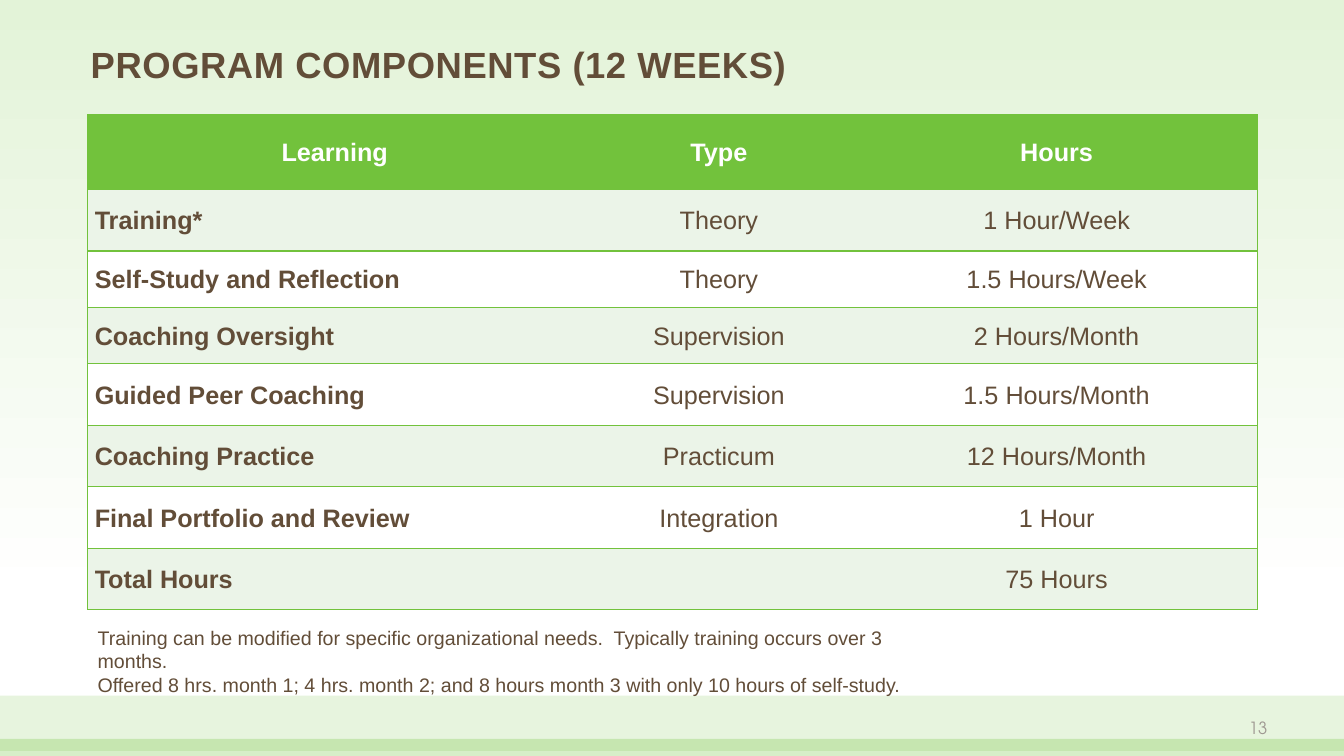
from lxml.etree import SubElement
from pptx import Presentation
from pptx.dml.color import RGBColor
from pptx.enum.shapes import MSO_SHAPE
from pptx.enum.text import MSO_ANCHOR, MSO_AUTO_SIZE, PP_ALIGN
from pptx.oxml.ns import qn
from pptx.util import Pt

PX = 9144  # EMU per px, 100 px to the inch
SLIDE_WIDTH, SLIDE_HEIGHT = 1333, 750

GREEN = RGBColor(0x72, 0xC2, 0x3C)
MIST = RGBColor(0xE3, 0xF3, 0xD8)
PALE = RGBColor(0xEB, 0xF4, 0xE8)
WHITE = RGBColor(0xFF, 0xFF, 0xFF)
BROWN = RGBColor(0x62, 0x4D, 0x38)
GREY = RGBColor(0x9E, 0x97, 0x91)

TITLE_FONT = {"name": "Arial", "size": Pt(26), "bold": True}
HEADER_FONT = {"name": "Arial", "size": Pt(18), "bold": True}
CELL_FONT = {"name": "Arial", "size": Pt(18), "bold": False}
NOTE_FONT = {"name": "Arial", "size": Pt(14)}
NUMBER_FONT = {"name": "TeX Gyre Adventor", "size": Pt(12)}

COLUMN_WIDTHS = [490, 272, 398]
ROW_HEIGHTS = [74, 61, 56, 56, 61, 61, 61, 61]
COMPONENTS = [
    ("Learning", "Type", "Hours"),
    ("Training*", "Theory", "1 Hour/Week"),
    ("Self-Study and Reflection", "Theory", "1.5 Hours/Week"),
    ("Coaching Oversight", "Supervision", "2 Hours/Month"),
    ("Guided Peer Coaching", "Supervision", "1.5 Hours/Month"),
    ("Coaching Practice", "Practicum", "12 Hours/Month"),
    ("Final Portfolio and Review", "Integration", "1 Hour"),
    ("Total Hours", "", "75 Hours"),
]
NOTES = [
    "Training can be modified for specific organizational needs.  "
    "Typically training occurs over 3 months.",
    "Offered 8 hrs. month 1; 4 hrs. month 2; and 8 hours month 3 "
    "with only 10 hours of self-study.",
]


def emu(box):
    return [length * PX for length in box]


def set_values(target, values):
    for name, value in values.items():
        setattr(target, name, value)


def write(para, text, font, color, align=PP_ALIGN.LEFT):
    para.alignment = align
    span = para.add_run()
    span.text = text
    set_values(span.font, font)
    span.font.color.rgb = color
    return span


def add_background(slide):
    fill = slide.background.fill
    fill.gradient()
    fill.gradient_angle = 270
    for stop, position, color in zip(fill.gradient_stops, (0, 0.79), (MIST, WHITE)):
        stop.position = position
        stop.color.rgb = color


def add_band(slide, box, opacity):
    band = slide.shapes.add_shape(MSO_SHAPE.RECTANGLE, *emu(box))
    band.shadow.inherit = False
    band.line.fill.background()
    band.fill.solid()
    band.fill.fore_color.rgb = GREEN
    color = band.fill._xPr.find(qn("a:solidFill"))[0]
    SubElement(color, qn("a:alpha"), val=str(opacity * 1000))


def add_title(slide, box):
    title = slide.shapes.title
    set_values(title, dict(zip(("left", "top", "width", "height"), emu(box))))
    frame = title.text_frame
    set_values(frame, {"vertical_anchor": MSO_ANCHOR.MIDDLE, "word_wrap": True,
                       "auto_size": MSO_AUTO_SIZE.NONE})
    span = write(frame.paragraphs[0], "PROGRAM COMPONENTS (12 WEEKS)", TITLE_FONT, BROWN)
    span._r.get_or_add_rPr().set("spc", "40")


def set_borders(cell, visible_sides):
    properties = cell._tc.get_or_add_tcPr()
    for side in "LRTB":
        line = SubElement(properties, qn(f"a:ln{side}"), w=str(Pt(1)))
        if side in visible_sides:
            fill = SubElement(line, qn("a:solidFill"))
            SubElement(fill, qn("a:srgbClr"), val=str(GREEN))
        else:
            SubElement(line, qn("a:noFill"))


def format_cell(cell, text, row, column):
    # Outer edges and row rules only
    edges = {0: "L", len(COLUMN_WIDTHS) - 1: "R"}
    set_borders(cell, "TB" + edges.get(column, ""))
    cell.fill.solid()
    cell.fill.fore_color.rgb = GREEN if row == 0 else PALE if row % 2 else WHITE
    set_values(cell, {"vertical_anchor": MSO_ANCHOR.MIDDLE, "margin_left": 7 * PX,
                      "margin_right": 7 * PX, "margin_top": 0, "margin_bottom": 0})
    if not text:
        return
    is_label = row > 0 and column == 0
    para = cell.text_frame.paragraphs[0]
    para.line_spacing = 1.07
    write(para, text,
          HEADER_FONT if row == 0 or is_label else CELL_FONT,
          WHITE if row == 0 else BROWN,
          PP_ALIGN.LEFT if is_label else PP_ALIGN.CENTER)


def add_components_table(slide, box):
    table = slide.shapes.add_table(len(ROW_HEIGHTS), len(COLUMN_WIDTHS), *emu(box)).table
    table.horz_banding = False
    for column, width in zip(table.columns, COLUMN_WIDTHS):
        column.width = width * PX
    for row, height in zip(table.rows, ROW_HEIGHTS):
        row.height = height * PX
    for row, texts in enumerate(COMPONENTS):
        for column, text in enumerate(texts):
            format_cell(table.cell(row, column), text, row, column)


def add_text(slide, box, lines, font, color, align, anchor):
    frame = slide.shapes.add_textbox(*emu(box)).text_frame
    set_values(frame, {"word_wrap": True, "vertical_anchor": anchor})
    for index, line in enumerate(lines):
        para = frame.add_paragraph() if index else frame.paragraphs[0]
        write(para, line, font, color, align)


def build_components_slide(deck):
    slide = deck.slides.add_slide(deck.slide_layouts[5])
    add_background(slide)
    # Footer bands
    add_band(slide, (0, 690, SLIDE_WIDTH, 55), 17)
    add_band(slide, (0, 733, SLIDE_WIDTH, 17), 28)
    # Heading and table
    add_title(slide, (80, 35, 1160, 56))
    add_components_table(slide, (87, 114, sum(COLUMN_WIDTHS), sum(ROW_HEIGHTS)))
    # Footnote and slide number
    add_text(slide, (87, 616, 860, 57), NOTES, NOTE_FONT, BROWN,
             PP_ALIGN.LEFT, MSO_ANCHOR.TOP)
    add_text(slide, (956, 702, 311, 40), ["13"], NUMBER_FONT, GREY,
             PP_ALIGN.RIGHT, MSO_ANCHOR.MIDDLE)


def main():
    deck = Presentation()
    deck.slide_width = SLIDE_WIDTH * PX
    deck.slide_height = SLIDE_HEIGHT * PX
    build_components_slide(deck)
    deck.save("out.pptx")


if __name__ == "__main__":
    main()
